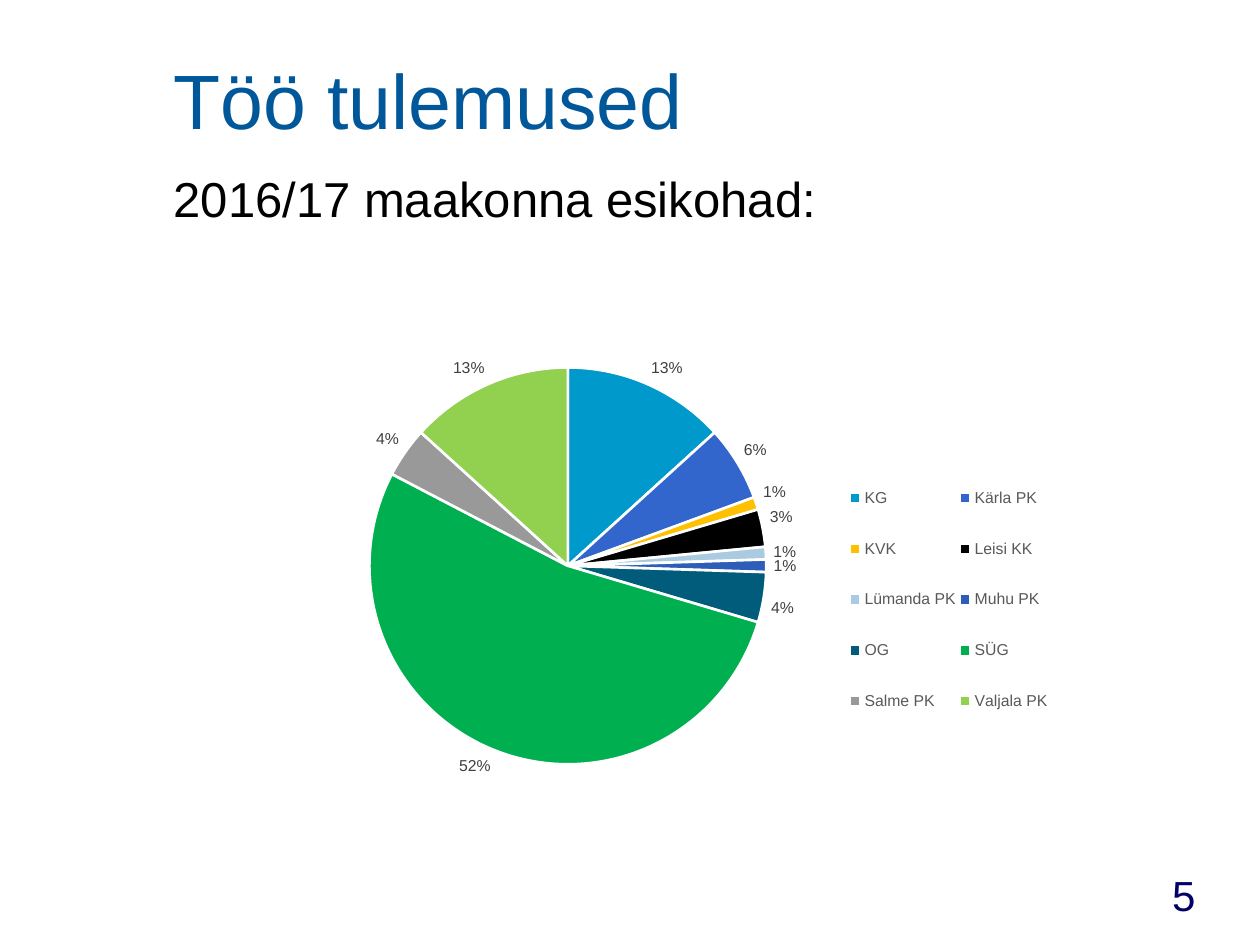
import pptx
import pptx.chart.data
import pptx.dml.color
import pptx.enum.chart
import pptx.enum.text
import pptx.oxml
import pptx.oxml.ns
import pptx.util
from pptx.util import Inches

RGBColor = pptx.dml.color.RGBColor
FONT = "Arial"
TITLE_BLUE = RGBColor(0x00, 0x58, 0x9A)
NUMBER_NAVY = RGBColor(0x00, 0x00, 0x66)
BLACK = RGBColor(0x00, 0x00, 0x00)
WHITE = RGBColor(0xFF, 0xFF, 0xFF)
LABEL_GREY = RGBColor(0x40, 0x40, 0x40)
LEGEND_GREY = RGBColor(0x59, 0x59, 0x59)

# School, share of first places in percent, slice colour
SCHOOLS = [
    ("KG", 13, RGBColor(0x00, 0x99, 0xCC)),
    ("Kärla PK", 6, RGBColor(0x33, 0x66, 0xCC)),
    ("KVK", 1, RGBColor(0xFF, 0xC0, 0x00)),
    ("Leisi KK", 3, BLACK),
    ("Lümanda PK", 1, RGBColor(0xAA, 0xCA, 0xE2)),
    ("Muhu PK", 1, RGBColor(0x2D, 0x5C, 0xB9)),
    ("OG", 4, RGBColor(0x00, 0x5C, 0x7A)),
    ("SÜG", 52, RGBColor(0x00, 0xB0, 0x50)),
    ("Salme PK", 4, RGBColor(0x99, 0x99, 0x99)),
    ("Valjala PK", 13, RGBColor(0x92, 0xD0, 0x50)),
]


def set_font(font, size, color):
    font.name = FONT
    font.size = pptx.util.Pt(size)
    font.color.rgb = color


def add_text(page, text, left, top, width, height, *, size, color,
             anchor=pptx.enum.text.MSO_ANCHOR.TOP,
             align=pptx.enum.text.PP_ALIGN.LEFT, wrap=True):
    box = page.shapes.add_textbox(
        Inches(left), Inches(top), Inches(width), Inches(height))
    frame = box.text_frame
    frame.word_wrap = wrap
    frame.vertical_anchor = anchor
    para = frame.paragraphs[0]
    para.alignment = align
    span = para.add_run()
    span.text = text
    set_font(span.font, size, color)


def make_layout(x, y, width, height, inner=False):
    target = '<c:layoutTarget val="inner"/>' if inner else ""
    return pptx.oxml.parse_xml(
        f'<c:layout {pptx.oxml.ns.nsdecls("c")}><c:manualLayout>{target}'
        '<c:xMode val="edge"/><c:yMode val="edge"/>'
        f'<c:x val="{x}"/><c:y val="{y}"/>'
        f'<c:w val="{width}"/><c:h val="{height}"/>'
        '</c:manualLayout></c:layout>')


def place_part(part, layout):
    """Give a chart part a fixed place, replacing any layout it has."""
    for old in part.findall(pptx.oxml.ns.qn("c:layout")):
        part.remove(old)
    position = part.find(pptx.oxml.ns.qn("c:legendPos"))
    if position is None:
        part.insert(0, layout)
    else:
        position.addnext(layout)


def add_pie(page, left, top, width, height):
    data = pptx.chart.data.CategoryChartData()
    data.categories = [name for name, _, _ in SCHOOLS]
    data.add_series("Series 1", [share for _, share, _ in SCHOOLS])
    chart = page.shapes.add_chart(
        pptx.enum.chart.XL_CHART_TYPE.PIE, Inches(left), Inches(top),
        Inches(width), Inches(height), data).chart
    chart.has_title = False
    set_font(chart.font, 10, BLACK)

    # Slices
    plot = chart.plots[0]
    plot.vary_by_categories = True
    for index, (_, _, color) in enumerate(SCHOOLS):
        slice_format = plot.series[0].points[index].format
        slice_format.fill.solid()
        slice_format.fill.fore_color.rgb = color
        slice_format.line.color.rgb = WHITE
        slice_format.line.width = pptx.util.Pt(1.5)

    # Labels outside the slices
    plot.has_data_labels = True
    labels = plot.data_labels
    labels.show_value = True
    labels.show_percentage = False
    labels.number_format = '0"%"'
    labels.number_format_is_linked = False
    labels.position = pptx.enum.chart.XL_LABEL_POSITION.OUTSIDE_END
    set_font(labels.font, 9, LABEL_GREY)

    # Two-column legend beside the pie
    chart.has_legend = True
    legend = chart.legend
    legend.position = pptx.enum.chart.XL_LEGEND_POSITION.BOTTOM
    legend.include_in_layout = False
    set_font(legend.font, 9, LEGEND_GREY)

    plot_area = chart.element.find(".//" + pptx.oxml.ns.qn("c:plotArea"))
    legend_area = chart.element.find(".//" + pptx.oxml.ns.qn("c:legend"))
    place_part(plot_area, make_layout(0.14, 0.13, 0.5, 0.84, inner=True))
    place_part(legend_area, make_layout(0.74, 0.34, 0.26, 0.55))


def main():
    deck = pptx.Presentation()
    deck.slide_width = Inches(10)
    deck.slide_height = Inches(7.5)
    page = deck.slides.add_slide(deck.slide_layouts[6])

    # Page number
    add_text(page, "5", 9.09, 6.85, 0.61, 0.5, size=24, color=NUMBER_NAVY,
             align=pptx.enum.text.PP_ALIGN.CENTER, wrap=False)

    # Title and lead line
    add_text(page, "Töö tulemused", 1.28, 0.26, 8.5, 0.94, size=44,
             color=TITLE_BLUE, anchor=pptx.enum.text.MSO_ANCHOR.BOTTOM)
    add_text(page, "2016/17 maakonna esikohad:", 1.28, 1.29, 8.5, 5.61,
             size=28, color=BLACK)

    # First places by school
    add_pie(page, 2.05, 2.22, 6.3, 4.13)

    deck.save("out.pptx")


if __name__ == "__main__":
    main()
